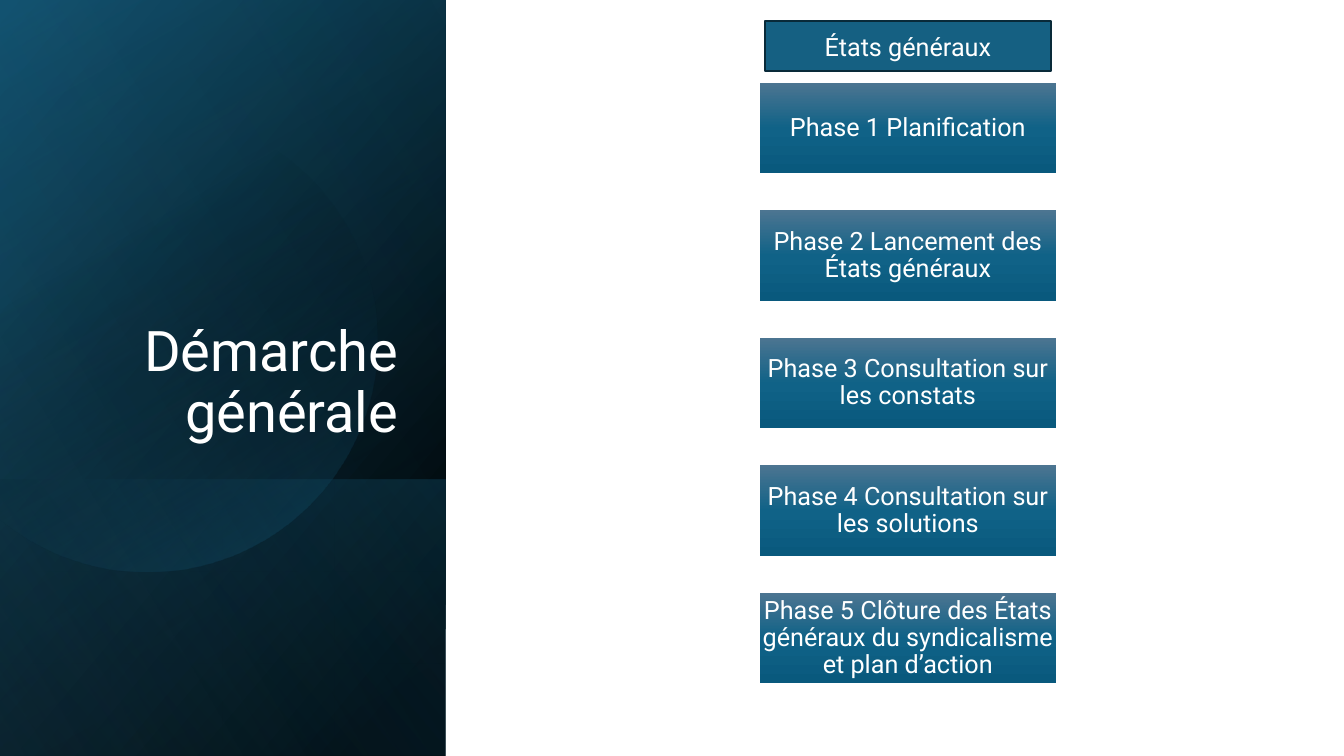
import math
from dataclasses import dataclass

import pptx
import pptx.dml.color
import pptx.enum.shapes
import pptx.enum.text
import pptx.oxml
import pptx.oxml.ns
import pptx.util

Cm = pptx.util.Cm
RECTANGLE = pptx.enum.shapes.MSO_SHAPE.RECTANGLE
ALIGN = pptx.enum.text.PP_ALIGN
ANCHOR = pptx.enum.text.MSO_ANCHOR


@dataclass(frozen=True)
class Theme:
    font: str = "Roboto"
    title_size: int = 40
    box_size: int = 18
    text: str = "FFFFFF"
    header_fill: str = "156082"
    header_line: str = "092A39"
    # Gradient stops: position %, colour, opacity %
    phase: tuple = ((0, "4C7591", 100), (50, "106287", 100), (100, "09597D", 100))
    panel_base: tuple = ((8, "000000", 100), (100, "104862", 100))
    panel_glow: tuple = ((0, "000000", 0), (99, "156082", 46))
    panel_foot: tuple = ((2, "156082", 29), (100, "000000", 30))
    panel_disc: tuple = ((29, "000000", 0), (100, "156082", 43))
    panel_sheen: tuple = ((0, "000000", 0), (99, "46B1E1", 11))


THEME = Theme()
PHASES = (
    "Phase 1 Planification",
    "Phase 2 Lancement des États généraux",
    "Phase 3 Consultation sur les constats",
    "Phase 4 Consultation sur les solutions",
    "Phase 5 Clôture des États généraux du syndicalisme et plan d’action",
)


def color(value):
    return pptx.dml.color.RGBColor.from_string(value)


def fill_gradient(shape, stops, angle):
    """Give the shape a linear gradient and no outline or shadow."""
    stop_xml = "".join(
        f'<a:gs pos="{position * 1000}"><a:srgbClr val="{value}">'
        f'<a:alpha val="{opacity * 1000}"/></a:srgbClr></a:gs>'
        for position, value, opacity in stops
    )
    gradient = pptx.oxml.parse_xml(
        f'<a:gradFill {pptx.oxml.ns.nsdecls("a")} rotWithShape="1">'
        f"<a:gsLst>{stop_xml}</a:gsLst>"
        f'<a:lin ang="{angle * 60000}" scaled="0"/></a:gradFill>'
    )
    shape.element.spPr.insert(2, gradient)
    shape.line.fill.background()
    shape.shadow.inherit = False


def write_text(shape, text, size, alignment, anchor, line_spacing):
    frame = shape.text_frame
    frame.word_wrap = True
    frame.auto_size = pptx.enum.text.MSO_AUTO_SIZE.NONE
    frame.vertical_anchor = anchor
    paragraph = frame.paragraphs[0]
    paragraph.alignment = alignment
    paragraph.line_spacing = line_spacing
    run = paragraph.add_run()
    run.text = text
    run.font.name = THEME.font
    run.font.size = pptx.util.Pt(size)
    run.font.color.rgb = color(THEME.text)


def add_turned_layer(slide, box, stops, angle):
    """Cover the box with a mirrored rectangle turned by 90 degrees."""
    left, top, width, height = box
    offset = (width - height) / 2
    shape = slide.shapes.add_shape(
        RECTANGLE, Cm(left + offset), Cm(top - offset), Cm(height), Cm(width)
    )
    shape.rotation = 90
    shape.element.spPr.get_or_add_xfrm().set("flipH", "1")
    fill_gradient(shape, stops, angle)


def add_disc(slide, left, center_x, center_y, radius):
    """Draw a disc cut off by the vertical line at left."""
    limit = math.acos((left - center_x) / radius)
    steps = 120
    angles = [limit * (2 * step / steps - 1) for step in range(steps + 1)]
    points = [
        (
            Cm(center_x + radius * math.cos(angle)),
            Cm(center_y + radius * math.sin(angle)),
        )
        for angle in angles
    ]
    builder = slide.shapes.build_freeform(*points[0])
    builder.add_line_segments(points[1:], close=True)
    fill_gradient(builder.convert_to_shape(), THEME.panel_disc, 60)


def add_title_panel(slide, box, text):
    left, top, width, height = box
    foot_height = 6.96

    # Layered background
    add_turned_layer(slide, box, THEME.panel_base, 50)
    add_turned_layer(slide, box, THEME.panel_glow, 30)
    foot = (left, top + height - foot_height, width, foot_height)
    add_turned_layer(slide, foot, THEME.panel_foot, 130)
    add_disc(slide, left, left + 3.72, top + 8.6, 5.8)
    add_turned_layer(slide, box, THEME.panel_sheen, 120)

    # Title, brought in front of the background
    title = slide.shapes.title
    title.left, title.top = Cm(left + 1.63), Cm(top + 4.67)
    title.width, title.height = Cm(8.66), Cm(6.65)
    write_text(title, text, THEME.title_size, ALIGN.RIGHT, ANCHOR.BOTTOM, 0.9)
    slide.shapes.element.append(title.element)


def add_phase_column(slide, box, header_text, phases):
    left, top, width, height = box
    header_height, header_inset, first_phase = 1.27, 0.13, 1.56
    phase_height = 2.28
    pitch = (height - first_phase - phase_height) / (len(phases) - 1)

    # Phases
    for index, text in enumerate(phases):
        phase = slide.shapes.add_shape(
            RECTANGLE, Cm(left), Cm(top + first_phase + index * pitch),
            Cm(width), Cm(phase_height),
        )
        fill_gradient(phase, THEME.phase, 90)
        frame = phase.text_frame
        frame.margin_left = frame.margin_right = Cm(0.03)
        frame.margin_top = frame.margin_bottom = Cm(0.03)
        write_text(phase, text, THEME.box_size, ALIGN.CENTER, ANCHOR.MIDDLE, 0.9)

    # Header
    header = slide.shapes.add_shape(
        RECTANGLE, Cm(left + header_inset), Cm(top),
        Cm(width - 2 * header_inset), Cm(header_height),
    )
    header.fill.solid()
    header.fill.fore_color.rgb = color(THEME.header_fill)
    header.line.color.rgb = color(THEME.header_line)
    header.line.width = pptx.util.Pt(1.5)
    header.shadow.inherit = False
    write_text(header, header_text, THEME.box_size, ALIGN.CENTER, ANCHOR.MIDDLE, 1.0)


def main():
    presentation = pptx.Presentation()
    presentation.slide_width = Cm(33.87)
    presentation.slide_height = Cm(19.05)
    slide = presentation.slides.add_slide(presentation.slide_layouts[5])
    add_title_panel(slide, (0, 0, 11.23, 19.05), "Démarche générale")
    add_phase_column(slide, (19.15, 0.53, 7.46, 16.69), "États généraux", PHASES)
    presentation.save("out.pptx")


if __name__ == "__main__":
    main()
